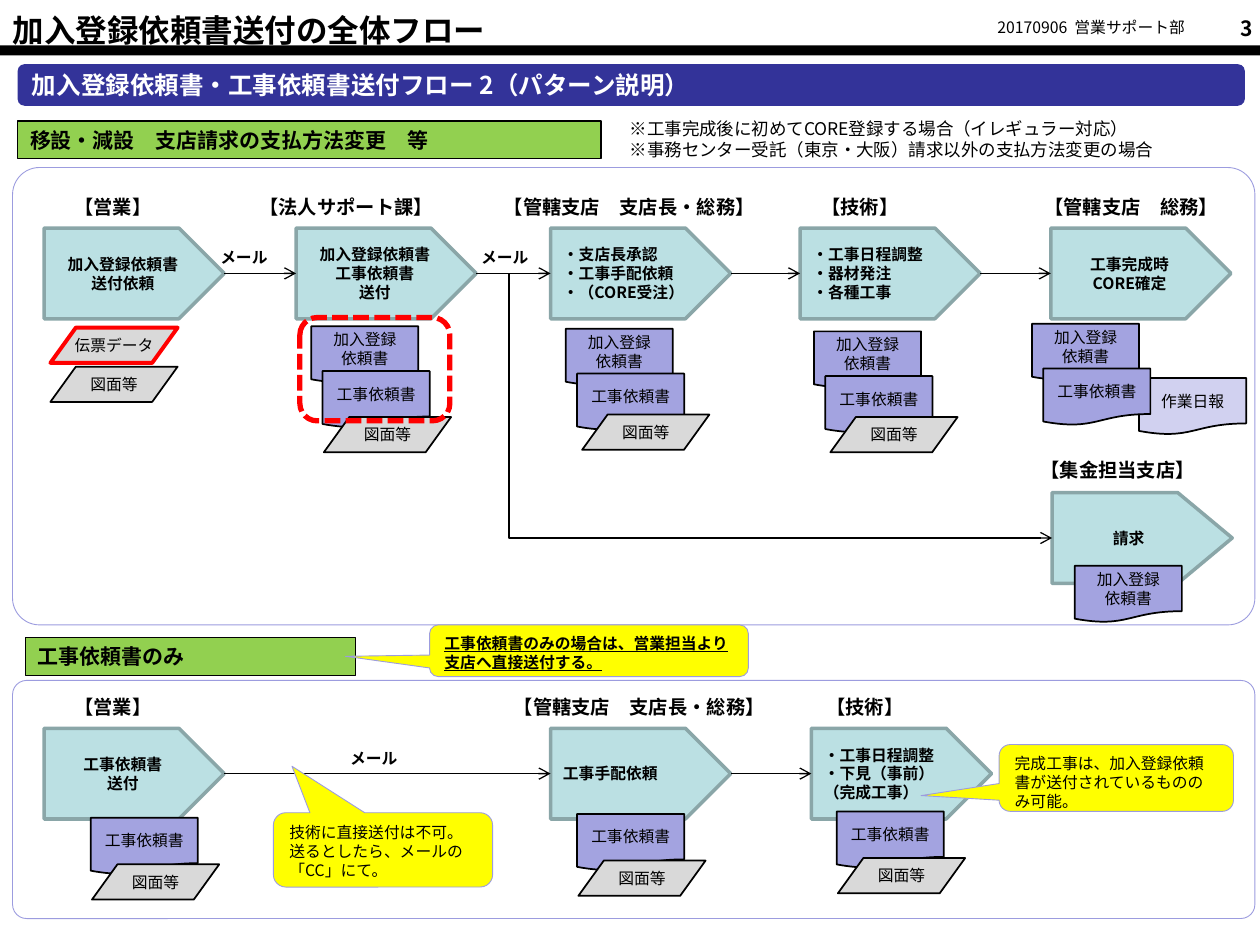
from copy import deepcopy
from lxml import etree
from pptx import Presentation
from pptx.dml.color import RGBColor
from pptx.enum import dml, shapes, text
from pptx.oxml import ns
from pptx.util import Inches, Pt

FONT = "Noto Sans CJK JP"
BLACK = RGBColor(0x00, 0x00, 0x00)
WHITE = RGBColor(0xFF, 0xFF, 0xFF)
NAVY = RGBColor(0x33, 0x33, 0x99)
GREEN = RGBColor(0x92, 0xD0, 0x50)
TEAL = RGBColor(0xBB, 0xE0, 0xE3)
SLATE = RGBColor(0x8A, 0xA6, 0xA8)
GRAY = RGBColor(0xD9, 0xD9, 0xD9)
RED = RGBColor(0xFF, 0x00, 0x00)
LILAC = RGBColor(0xA3, 0xA3, 0xE0)
PALE = RGBColor(0xD1, 0xD1, 0xF0)
EDGE = RGBColor(0x9C, 0x9C, 0xDF)
YELLOW = RGBColor(0xFF, 0xFF, 0x00)

KIND = shapes.MSO_SHAPE
LINK = shapes.MSO_CONNECTOR
LEFT, MID, RIGHT = text.PP_ALIGN.LEFT, text.PP_ALIGN.CENTER, text.PP_ALIGN.RIGHT
TOP, CENTER = text.MSO_ANCHOR.TOP, text.MSO_ANCHOR.MIDDLE
REG, WORK, PLAN = "加入登録\n依頼書", "工事依頼書", "図面等"


def write(shape, lines, size=9, color=BLACK, align=LEFT, anchor=TOP, wrap=True, **font):
    """Fill a shape with one paragraph per line."""
    frame = shape.text_frame
    frame.auto_size = text.MSO_AUTO_SIZE.NONE
    frame.word_wrap, frame.vertical_anchor = wrap, anchor
    lines = [lines] if isinstance(lines, str) else lines
    for i, line in enumerate(lines):
        para = frame.add_paragraph() if i else frame.paragraphs[0]
        para.text, para.alignment = line, align
        para.line_spacing = Pt(size * 1.2)
        for run in para.runs:
            look = {"name": FONT, "size": Pt(size), "bold": False, **font}
            for key, value in look.items():
                setattr(run.font, key, value)
            run.font.color.rgb = color
            props = run._r.get_or_add_rPr()
            etree.SubElement(props, ns.qn("a:ea"), typeface=FONT)
        # Line breaks take the size of the text around them
        for gap in para._p.findall(ns.qn("a:br")):
            gap.insert(0, deepcopy(props))


def draw(slide, kind, box, fill=None, line=None, width=0.75, adj=()):
    shape = slide.shapes.add_shape(kind, *map(Inches, box))
    shape.shadow.inherit = False
    for part, color in ((shape.fill, fill), (shape.line.fill, line)):
        if color is None:
            part.background()
        else:
            part.solid()
            part.fore_color.rgb = color
    if line is not None:
        shape.line.width = Pt(width)
    for i, value in enumerate(adj):
        shape.adjustments[i] = value
    return shape


def label(slide, box, lines, **look):
    write(slide.shapes.add_textbox(*map(Inches, box)), lines, **look)


def head(slide, x, y, width, words):
    label(slide, (x, y, width, 0.29), words, size=11, bold=True)


def step(slide, x, y, lines, align=MID, adj=()):
    shape = draw(slide, KIND.PENTAGON, (x, y, 1.43, 0.72), TEAL, SLATE, 2, adj)
    write(shape, lines, align=align, anchor=CENTER, bold=True)
    return shape


def chip(slide, kind, box, words, fill, line=BLACK, width=1):
    shape = draw(slide, kind, box, fill, line, width)
    write(shape, words, align=MID, anchor=CENTER, wrap=False)


def doc(slide, x, y, words, fill=LILAC):
    chip(slide, KIND.FLOWCHART_DOCUMENT, (x, y, 0.85, 0.45), words, fill)


def data(slide, x, y, words=PLAN, **edge):
    chip(slide, KIND.FLOWCHART_DATA, (x, y, 1.01, 0.28), words, GRAY, **edge)


def join(slide, start, end, bend=None):
    """Arrow from the tip of one step to the back of the next."""
    kind = LINK.STRAIGHT if bend is None else LINK.ELBOW
    line = slide.shapes.add_connector(kind, 0, 0, 0, 0)
    line.begin_connect(start, 3)
    line.end_connect(end, 1)
    line.line.color.rgb, line.line.width = BLACK, Pt(0.75)
    props = line._element.spPr
    etree.SubElement(props.find(ns.qn("a:ln")), ns.qn("a:tailEnd"), type="arrow")
    etree.SubElement(props, ns.qn("a:effectLst"))
    if bend is not None:
        guides = props.find(ns.qn("a:prstGeom")).find(ns.qn("a:avLst"))
        etree.SubElement(guides, ns.qn("a:gd"), name="adj1", fmla=f"val {bend}")


def band(slide, box, words):
    write(draw(slide, KIND.RECTANGLE, box, GREEN, BLACK), words, size=12, bold=True)


def note(slide, box, adj, words, **look):
    shape = draw(slide, KIND.ROUNDED_RECTANGULAR_CALLOUT, box, YELLOW, EDGE, 0.5, adj)
    write(shape, words, **look)


def header(slide):
    draw(slide, KIND.RECTANGLE, (0, 0.36, 10, 0.08), BLACK)
    title = slide.shapes.title
    place = {"left": 0, "top": 0.04, "width": 5.79, "height": 0.4}
    for key, value in place.items():
        setattr(title, key, Inches(value))
    write(title, "加入登録依頼書送付の全体フロー", size=18, bold=True)
    label(slide, (7.76, 0.09, 1.8, 0.25), "20170906  営業サポート部", align=MID, wrap=False)
    label(slide, (9.5, 0.07, 0.54, 0.29), "3", size=12, align=RIGHT, bold=True)
    bar = draw(slide, KIND.ROUNDED_RECTANGLE, (0.14, 0.51, 9.74, 0.33), NAVY)
    write(bar, "加入登録依頼書・工事依頼書送付フロー 2（パターン説明）", size=14,
          color=WHITE, anchor=CENTER, wrap=False, bold=True)


def upper(slide):
    band(slide, (0.14, 0.96, 4.63, 0.3), "移設・減設　支店請求の支払方法変更　等")
    label(slide, (4.9, 0.89, 4.57, 0.44),
          ["※工事完成後に初めてCORE登録する場合（イレギュラー対応）",
           "※事務センター受託（東京・大阪）請求以外の支払方法変更の場合"], size=10)
    for x, width, words in ((0.49, 0.89, "【営業】"), (1.96, 1.94, "【法人サポート課】"),
                            (3.9, 2.28, "【管轄支店　支店長・総務】"),
                            (6.42, 1.06, "【技術】"), (8.19, 1.81, "【管轄支店　総務】")):
        head(slide, x, 1.5, width, words)
    head(slide, 8.16, 3.59, 1.6, "【集金担当支店】")
    # Main chain and the branch to billing
    chain = [step(slide, x, 1.81, lines, align) for x, lines, align in (
        (0.35, ["加入登録依頼書", "送付依頼"], MID),
        (2.35, ["加入登録依頼書", "工事依頼書", "送付"], MID),
        (4.37, ["・支店長承認", "・工事手配依頼", "・（CORE受注）"], LEFT),
        (6.35, ["・工事日程調整", "・器材発注", "・各種工事"], LEFT),
        (8.34, ["工事完成時", "CORE確定"], MID))]
    for start, end in zip(chain, chain[1:]):
        join(slide, start, end)
    bill = step(slide, 8.35, 3.91, "請求", adj=[0.6])
    join(slide, chain[1], bill, bend=5700)
    # Papers under each step
    data(slide, 0.4, 2.6, "伝票データ", line=RED, width=2.25)
    data(slide, 0.4, 2.91)
    doc(slide, 9.04, 3, "作業日報", PALE)
    for x, y in ((2.47, 2.59), (4.49, 2.61), (6.46, 2.63), (8.19, 2.57)):
        doc(slide, x, y, REG)
        doc(slide, x + 0.09, y + 0.355, WORK)
    for x, y in ((2.57, 3.31), (4.62, 3.29), (6.59, 3.31)):
        data(slide, x, y)
    doc(slide, 8.53, 4.49, REG)
    ring = draw(slide, KIND.ROUNDED_RECTANGLE, (2.38, 2.52, 1.19, 0.82), None, RED, 3)
    ring.line.dash_style = dml.MSO_LINE.SQUARE_DOT


def lower(slide):
    band(slide, (0.2, 5.06, 2.62, 0.3), "工事依頼書のみ")
    for x, width, words in ((0.49, 0.89, "【営業】"), (6.46, 1.06, "【技術】"),
                            (3.98, 2.32, "【管轄支店　支店長・総務】")):
        head(slide, x, 5.47, width, words)
    chain = [step(slide, x, 5.78, lines, align) for x, lines, align in (
        (0.35, ["工事依頼書", "送付"], MID), (4.37, "工事手配依頼", LEFT),
        (6.44, ["・工事日程調整", "・下見（事前）", "（完成工事）"], LEFT))]
    for start, end in zip(chain, chain[1:]):
        join(slide, start, end)
    for x, y in ((0.72, 6.49), (4.58, 6.46), (6.64, 6.44)):
        doc(slide, x, y, WORK)
        data(slide, x + 0.01, y + 0.37)
    note(slide, (2.17, 6.45, 1.74, 0.59), (-0.415, -1.125, 0.167),
         "技術に直接送付は不可。送るとしたら、メールの「CC」にて。")
    note(slide, (7.93, 5.91, 1.86, 0.53), (-0.833, 0.264, 0.167),
         "完成工事は、加入登録依頼書が送付されているもののみ可能。")


def main():
    deck = Presentation()
    deck.slide_width, deck.slide_height = Inches(10), Inches(7.5)
    slide = deck.slides.add_slide(deck.slide_layouts[5])
    header(slide)
    upper(slide)
    lower(slide)
    # Mail labels over the arrows
    for x, y in ((1.65, 1.92), (3.72, 1.92), (2.68, 5.89)):
        label(slide, (x, y, 0.77, 0.25), "メール", bold=True)
    # Frames around both flows
    for y, height in ((1.33, 3.63), (5.4, 1.89)):
        draw(slide, KIND.ROUNDED_RECTANGLE, (0.1, y, 9.86, height), None, EDGE, 0.5, [0.059])
    note(slide, (3.41, 4.96, 2.53, 0.41), (-0.764, 0.108, 0.167),
         "工事依頼書のみの場合は、営業担当より支店へ直接送付する。", bold=True, underline=True)
    deck.save("out.pptx")


if __name__ == "__main__":
    main()
